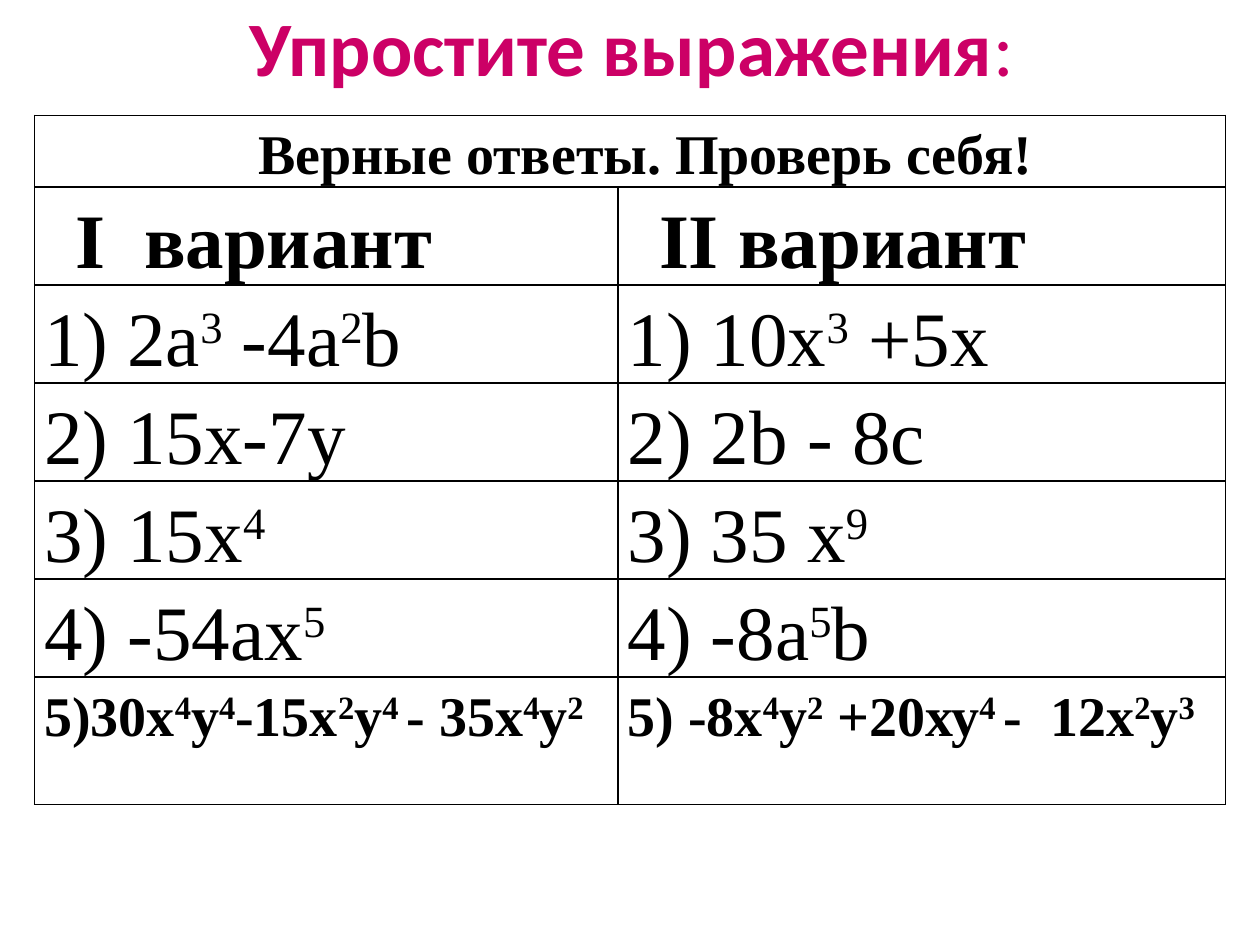
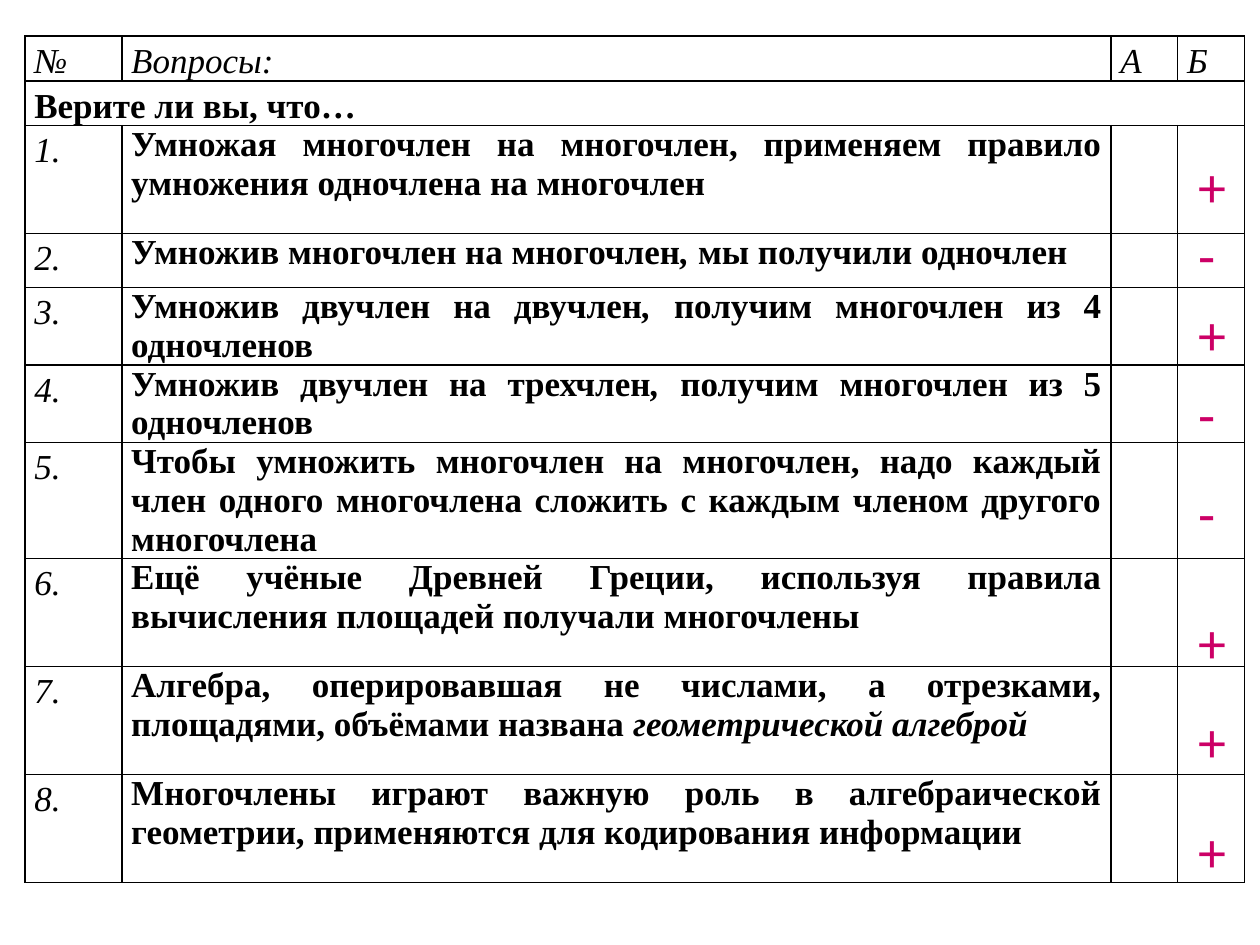
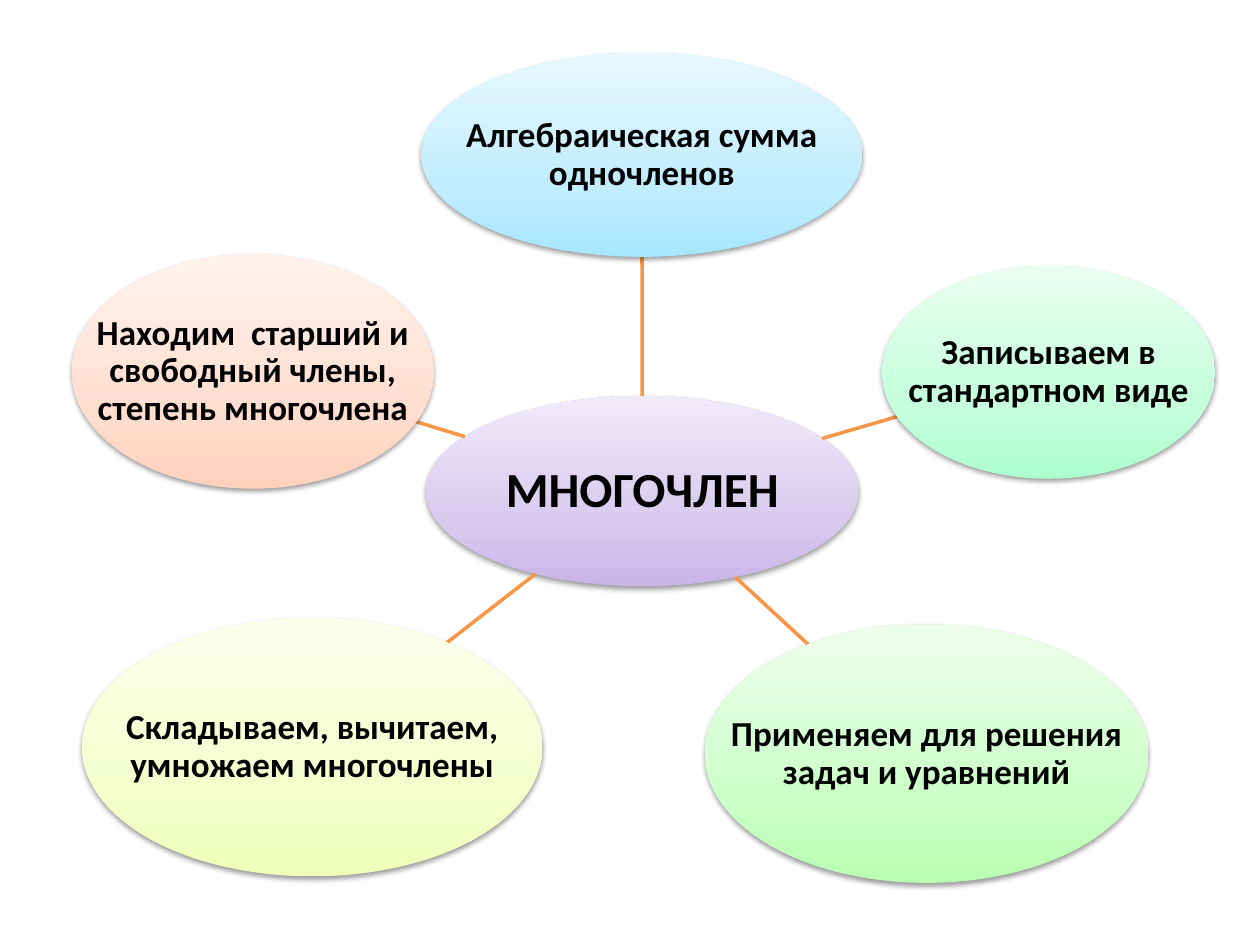
from copy import deepcopy
from dataclasses import dataclass, replace
from math import hypot

from pptx import Presentation
from pptx.dml.color import RGBColor
from pptx.enum.shapes import MSO_CONNECTOR, MSO_SHAPE
from pptx.enum.text import MSO_ANCHOR, MSO_AUTO_SIZE, PP_ALIGN
from pptx.oxml import parse_xml
from pptx.oxml.ns import nsdecls, qn
from pptx.util import Pt

CENTER, JUSTIFY, LEFT = PP_ALIGN.CENTER, PP_ALIGN.JUSTIFY, PP_ALIGN.LEFT
MIDDLE, TOP = MSO_ANCHOR.MIDDLE, MSO_ANCHOR.TOP
GROW = MSO_AUTO_SIZE.SHAPE_TO_FIT_TEXT
OVAL, STRAIGHT = MSO_SHAPE.OVAL, MSO_CONNECTOR.STRAIGHT

BLACK, PINK, ORANGE = "000000", "CC0066", "F79646"
SANS, SERIF = "Calibri", "Times New Roman"
PITCH = 1.107  # line height of the serif font, in sizes
SWITCH = "|"  # turns the second style of a text on and off


@dataclass(frozen=True)
class Style:
    size: float
    font: str = SERIF
    color: str = BLACK
    bold: bool = False
    italic: bool = False
    second: str = "italic"
    align: PP_ALIGN = JUSTIFY
    space: float = 1
    indent: float = 0

    @property
    def leading(self) -> float | Pt:
        """Exact spacing for the tables' serif text, relative otherwise."""
        if self.font == SERIF:
            return Pt(round(self.size * PITCH * self.space, 1))
        return self.space


@dataclass(frozen=True)
class Box:
    left: float
    top: float
    width: float
    height: float

    @property
    def mid(self) -> tuple[float, float]:
        return self.left + self.width / 2, self.top + self.height / 2

    def edge(self, other: "Box") -> tuple[float, float]:
        """Point where the inscribed ellipse meets the line to the other centre."""
        (x, y), (far_x, far_y) = self.mid, other.mid
        dx, dy = far_x - x, far_y - y
        part = 1 / hypot(dx / self.width * 2, dy / self.height * 2)
        return x + dx * part, y + dy * part

    def points(self) -> list[Pt]:
        return [Pt(n) for n in (self.left, self.top, self.width, self.height)]


@dataclass(frozen=True)
class Node:
    text: str
    box: Box
    shades: tuple[str, str, str]


@dataclass(frozen=True)
class Entry:
    text: str
    style: Style


TITLE = Style(44, SANS, PINK, bold=True, second="plain", align=CENTER)
MARK = Style(32, SANS, PINK, align=LEFT)
TOPIC = Style(28, SANS, bold=True, align=CENTER, space=0.9)
FACT = replace(TOPIC, size=20)

SUM = Style(44, second="raised", space=1.15)
LONG = replace(SUM, size=32, bold=True)
HEAD = replace(SUM, bold=True, indent=18)
BANNER = replace(HEAD, size=32, align=CENTER)

NUMBER = Style(20, italic=True, space=1.15)
CLAIM = Style(20, bold=True)
LEAD = replace(CLAIM, space=1.15)

ANSWERS = [
    ("1) 2a|3| -4a|2|b", "1) 10х|3| +5х"),
    ("2) 15x-7y", "2) 2b - 8c"),
    ("3) 15x|4", "3) 35 x|9 "),
    ("4) -54ax|5 ", "4) -8a|5|b "),
]
LAST = (
    "5)30x|4|y|4|-15x|2|y|4 |- 35x|4|y|2",
    "5) -8х|4|у|2| +20ху|4 |-  12х|2|у|3",
)
CLAIMS = [
    "Умножая многочлен на многочлен, применяем правило умножения одночлена на многочлен",
    "Умножив многочлен на многочлен|,| мы получили одночлен",
    "Умножив двучлен на двучлен|,| получим многочлен из 4 одночленов",
    "Умножив двучлен на трехчлен|,| получим многочлен из 5 одночленов",
    "Чтобы умножить многочлен на многочлен, надо каждый член одного многочлена "
    "сложить с каждым членом другого многочлена",
    "Ещё учёные Древней Греции, используя правила вычисления площадей получали многочлены",
    "Алгебра, оперировавшая не числами, а отрезками, площадями, объёмами названа "
    "|геометрической алгеброй",
    "Многочлены играют важную роль в алгебраической геометрии, "
    "применяются для кодирования информации",
]
MARKS = [("+", 82.8), ("-", 122.4), ("+", 167.8), ("-", 213.1),
         ("-", 270), ("+", 343.4), ("+", 400.3), ("+", 463)]

HUB = Node("МНОГОЧЛЕН", Box(243.5, 226.3, 247, 108.7), ("C9B5E8", "D8CBEE", "F0EAF9"))
FACTS = [
    Node("Алгебраическая сумма одночленов", Box(240.8, 30.2, 252, 116.6),
         ("A7E6FF", "C1EDFF", "E7F8FF")),
    Node("Записываем в стандартном виде", Box(504.2, 151.9, 190.1, 121.7),
         ("ADFFCD", "C5FFDB", "E9FFF1")),
    Node("Применяем для решения задач и уравнений", Box(402.8, 356.9, 253.4, 147.6),
         ("B9FFB2", "CDFFC9", "ECFFEA")),
    Node("Складываем, вычитаем, умножаем многочлены", Box(47, 353.2, 262.8, 147.6),
         ("F0FFB8", "F4FFCD", "FBFFEC")),
    Node("Находим  старший и свободный члены, степень многочлена",
         Box(41.2, 145.4, 206.6, 133.9), ("FFD2BD", "FFDED0", "FFF2ED")),
]


def rgb(color: str) -> RGBColor:
    return RGBColor.from_string(color)


def write(frame, text: str, style: Style) -> None:
    para = frame.paragraphs[0]
    para.alignment, para.line_spacing = style.align, style.leading
    if style.indent:
        props = para._p.get_or_add_pPr()
        props.set("marL", str(Pt(style.indent)))
        props.set("indent", "0")
    for turn, piece in enumerate(text.split(SWITCH)):
        if not piece:
            continue
        run = para.add_run()
        run.text = piece
        font, second = run.font, style.second if turn % 2 else ""
        font.size, font.name = Pt(style.size), style.font
        font.color.rgb = rgb(style.color)
        font.bold = style.bold and second != "plain"
        font.italic = style.italic or second == "italic"
        if second == "raised":
            run._r.get_or_add_rPr().set("baseline", "30000")


def label(slide, text: str, box: Box, style: Style, anchor=MIDDLE, inset: float = 0.9):
    frame = slide.shapes.add_textbox(*box.points()).text_frame
    frame.word_wrap, frame.vertical_anchor = True, anchor
    frame.margin_left = frame.margin_right = Pt(inset)
    frame.margin_top = frame.margin_bottom = Pt(inset / 2)
    write(frame, text, style)
    return frame


def outline(cell) -> None:
    props = cell._tc.get_or_add_tcPr()
    for side in "LRTB":
        props.append(parse_xml(
            f'<a:ln{side} {nsdecls("a")} w="{Pt(1)}"><a:solidFill>'
            f'<a:srgbClr val="{BLACK}"/></a:solidFill></a:ln{side}>'))
    cell.fill.background()


def grid(slide, left: float, top: float, cols: list[float], rows: list[float],
         lines: list[list[Entry]]) -> None:
    """Draw a table; a line with one entry spans all columns."""
    box = Box(left, top, sum(cols), sum(rows))
    table = slide.shapes.add_table(len(rows), len(cols), *box.points()).table
    table.first_row = table.horz_banding = False
    for col, width in zip(table.columns, cols):
        col.width = Pt(width)
    for row, height in zip(table.rows, rows):
        row.height = Pt(height)
    for cell in table.iter_cells():
        cell.margin_left = cell.margin_right = Pt(5.4)
        cell.margin_top = cell.margin_bottom = 0
        outline(cell)
    for at, line in enumerate(lines):
        if len(line) == 1:
            table.cell(at, 0).merge(table.cell(at, len(cols) - 1))
        for col, entry in enumerate(line):
            write(table.cell(at, col).text_frame, entry.text, entry.style)


def oval(slide, node: Node, style: Style) -> None:
    shape = slide.shapes.add_shape(OVAL, *node.box.points())
    shape.line.fill.background()
    fill = shape.fill
    fill.gradient()
    fill.gradient_angle = 90
    props = shape._element.spPr
    stops = props.find(".//" + qn("a:gsLst"))
    stops.insert(1, deepcopy(stops[0]))
    for stop, color, place in zip(fill.gradient_stops, node.shades, (0, 0.35, 1)):
        stop.color.rgb, stop.position = rgb(color), place
    shape.shadow.inherit = False
    props.find(qn("a:effectLst")).append(parse_xml(
        f'<a:outerShdw {nsdecls("a")} blurRad="{Pt(3.1)}" dist="{Pt(1.6)}" '
        f'dir="5400000" rotWithShape="0"><a:srgbClr val="{BLACK}">'
        '<a:alpha val="38000"/></a:srgbClr></a:outerShdw>'))
    label(slide, node.text, node.box, style)


def link(slide, start: Box, end: Box) -> None:
    ends = [Pt(n) for n in (*start.edge(end), *end.edge(start))]
    line = slide.shapes.add_connector(STRAIGHT, *ends)
    line.line.color.rgb, line.line.width = rgb(ORANGE), Pt(2)
    line._element.spPr.append(parse_xml(f'<a:effectLst {nsdecls("a")}/>'))


def answers(slide) -> None:
    label(slide, "Упростите выражения|:", Box(37, -7.9, 648, 67.7), TITLE, inset=7.2)
    lines = [[Entry("Верные ответы. Проверь себя!", BANNER)],
             [Entry(text, HEAD) for text in ("I  вариант", "II вариант")]]
    lines += [[Entry(text, SUM) for text in pair] for pair in ANSWERS]
    lines.append([Entry(text, LONG) for text in LAST])
    grid(slide, 19.8, 66, [333.4, 347], [37.4] + [51.8] * 5 + [72.7], lines)


def claims(slide) -> None:
    lines = [[Entry(text, NUMBER) for text in ("№ ", "Вопросы:", "А ", "Б")],
             [Entry("Верите ли вы, что…", LEAD)]]
    lines += [[Entry(f"{n}.", NUMBER), Entry(text, CLAIM)]
              for n, text in enumerate(CLAIMS, 1)]
    rows = [11.5] * 2 + [61.7] + [30.9] * 3 + [61.7] * 4
    grid(slide, 14.2, 20.7, [55.4, 565.2, 38.2, 38.2], rows, lines)
    for sign, top in MARKS:
        frame = label(slide, sign, Box(677.5, top, 28.1, 46), MARK, TOP, 7.2)
        frame.auto_size = GROW


def scheme(slide) -> None:
    oval(slide, HUB, TOPIC)
    for node in FACTS:
        link(slide, HUB.box, node.box)
        oval(slide, node, FACT)


def main() -> None:
    deck = Presentation()
    deck.slide_width, deck.slide_height = Pt(720), Pt(540)
    blank = deck.slide_layouts[6]
    for draw in (answers, claims, scheme):
        draw(deck.slides.add_slide(blank))
    deck.save("out.pptx")


if __name__ == "__main__":
    main()
